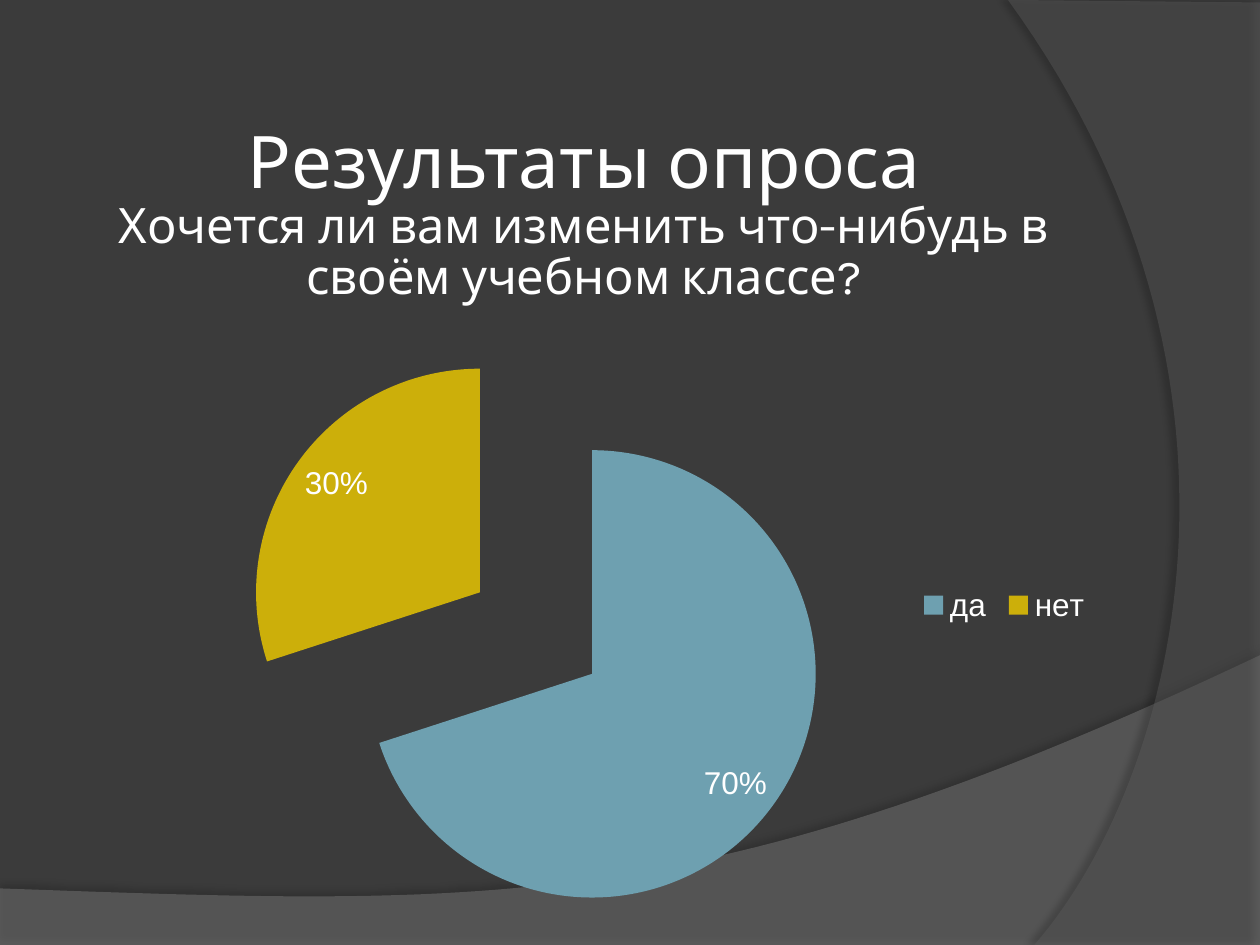
from dataclasses import dataclass

from lxml import etree
from pptx import Presentation
from pptx.chart.data import CategoryChartData
from pptx.dml.color import RGBColor
from pptx.enum.chart import XL_CHART_TYPE, XL_LABEL_POSITION, XL_LEGEND_POSITION
from pptx.enum.text import MSO_ANCHOR, PP_ALIGN
from pptx.oxml import parse_xml
from pptx.oxml.ns import nsdecls, qn
from pptx.util import Cm, Pt


@dataclass(frozen=True)
class Theme:
    background: RGBColor = RGBColor(0x3B, 0x3B, 0x3B)
    text: RGBColor = RGBColor(0xFF, 0xFF, 0xFF)
    wave: RGBColor = RGBColor(0x7F, 0x7F, 0x7F)
    arc: RGBColor = RGBColor(0x5E, 0x5E, 0x5E)
    slices: tuple = (RGBColor(0x6E, 0xA0, 0xB0), RGBColor(0xCC, 0xAF, 0x0A))
    title_font: str = "Karla"
    chart_font: str = "Arial"
    title_size: Pt = Pt(41.4)
    question_size: Pt = Pt(27.9)
    chart_size: Pt = Pt(18)


THEME = Theme()


def bezier(start, control_1, control_2, end, steps=60):
    """Return points along a cubic curve, both ends included."""
    points = []
    for step in range(steps + 1):
        t = step / steps
        weights = ((1 - t) ** 3, 3 * t * (1 - t) ** 2, 3 * t ** 2 * (1 - t), t ** 3)
        points.append(tuple(
            sum(weight * value for weight, value in zip(weights, axis))
            for axis in zip(start, control_1, control_2, end)))
    return points


def add_panel(page, points, color, opacity, shadow):
    """Add a translucent outline; shadow is (opacity, blur, distance, angle)."""
    corners = [(Cm(x), Cm(y)) for x, y in points]
    builder = page.shapes.build_freeform(*corners[0], scale=1.0)
    builder.add_line_segments(corners[1:], close=True)
    panel = builder.convert_to_shape()
    panel.fill.solid()
    panel.fill.fore_color.rgb = color
    panel.line.fill.background()
    properties = panel._element.spPr
    tint = properties.find(qn("a:solidFill")).find(qn("a:srgbClr"))
    etree.SubElement(tint, qn("a:alpha"), val=str(opacity * 1000))
    strength, blur, distance, angle = shadow
    properties.append(parse_xml(
        f'<a:effectLst {nsdecls("a")}><a:outerShdw blurRad="{Pt(blur)}" '
        f'dist="{Pt(distance)}" dir="{angle * 60000}" rotWithShape="0">'
        f'<a:srgbClr val="000000"><a:alpha val="{strength * 1000}"/></a:srgbClr>'
        '</a:outerShdw></a:effectLst>'))


def add_title(page, heading, question):
    box = page.shapes.add_textbox(Cm(1.4), Cm(2.77), Cm(20.75), Cm(3.18))
    frame = box.text_frame
    frame.word_wrap = True
    frame.vertical_anchor = MSO_ANCHOR.MIDDLE
    frame.margin_left = frame.margin_right = Cm(0.13)
    frame.margin_top = frame.margin_bottom = Cm(0.13)
    para = frame.paragraphs[0]
    para.alignment = PP_ALIGN.CENTER
    para.line_spacing = 0.87
    for text, size in ((heading, THEME.title_size), (question, THEME.question_size)):
        if para.runs:
            para.add_line_break()
        span = para.add_run()
        span.text = text
        span.font.size = size
        span.font.name = THEME.title_font
        span.font.color.rgb = THEME.text


def set_layout(element, x, y, width, height, inner=False):
    """Place a plot area or legend by fractions of the chart."""
    target = '<c:layoutTarget val="inner"/>' if inner else ""
    layout = parse_xml(
        f'<c:layout {nsdecls("c")}><c:manualLayout>{target}'
        '<c:xMode val="edge"/><c:yMode val="edge"/>'
        f'<c:x val="{x}"/><c:y val="{y}"/><c:w val="{width}"/><c:h val="{height}"/>'
        '</c:manualLayout></c:layout>')
    for old in element.findall(qn("c:layout")):
        element.remove(old)
    position = element.find(qn("c:legendPos"))
    if position is None:
        element.insert(0, layout)
    else:
        position.addnext(layout)


def add_survey_pie(page, answers):
    data = CategoryChartData()
    data.categories = list(answers)
    data.add_series("Series 1", list(answers.values()))
    chart = page.shapes.add_chart(
        XL_CHART_TYPE.PIE_EXPLODED, Cm(1.57), Cm(6.48), Cm(20.75), Cm(12.57), data).chart
    chart.has_title = False
    chart.font.size = THEME.chart_size
    chart.font.name = THEME.chart_font
    chart.font.color.rgb = THEME.text

    chart.has_legend = True
    chart.legend.position = XL_LEGEND_POSITION.RIGHT
    chart.legend.include_in_layout = False
    set_layout(chart.legend._element, 0.81, 0.42, 0.18, 0.07)

    plot = chart.plots[0]
    plot.vary_by_categories = True
    set_layout(plot._element.getparent(), 0.16, 0.03, 0.57, 0.94, inner=True)
    series = plot.series[0]
    for index, color in enumerate(THEME.slices):
        fill = series.points[index].format.fill
        fill.solid()
        fill.fore_color.rgb = color
    series._element.find(qn("c:explosion")).set("val", "31")

    plot.has_data_labels = True
    labels = plot.data_labels
    labels.show_percentage = True
    labels.show_value = False
    labels.number_format = "0%"
    labels.number_format_is_linked = False
    labels.position = XL_LABEL_POSITION.INSIDE_END


def main():
    deck = Presentation()
    deck.slide_width, deck.slide_height = Cm(25.4), Cm(19.05)
    page = deck.slides.add_slide(deck.slide_layouts[6])
    page.background.fill.solid()
    page.background.fill.fore_color.rgb = THEME.background

    wave = bezier((25.4, 13.21), (14.2, 18.52), (9.93, 18.26), (0, 17.91))
    add_panel(page, wave + [(0, 19.05), (25.4, 19.05)], THEME.wave, 45, (35, 4, 3.5, 270))
    arc = bezier((20.85, 19.05), (23.75, 15.72), (25.86, 7.62), (20.32, 0))
    add_panel(page, arc + [(25.4, 0.05), (25.4, 19.05)], THEME.arc, 40, (45, 4, 4, 180))

    add_title(page, "Результаты опроса",
              "Хочется ли вам изменить что-нибудь в своём учебном классе?")
    add_survey_pie(page, {"да": 70, "нет": 30})
    deck.save("out.pptx")


if __name__ == "__main__":
    main()
